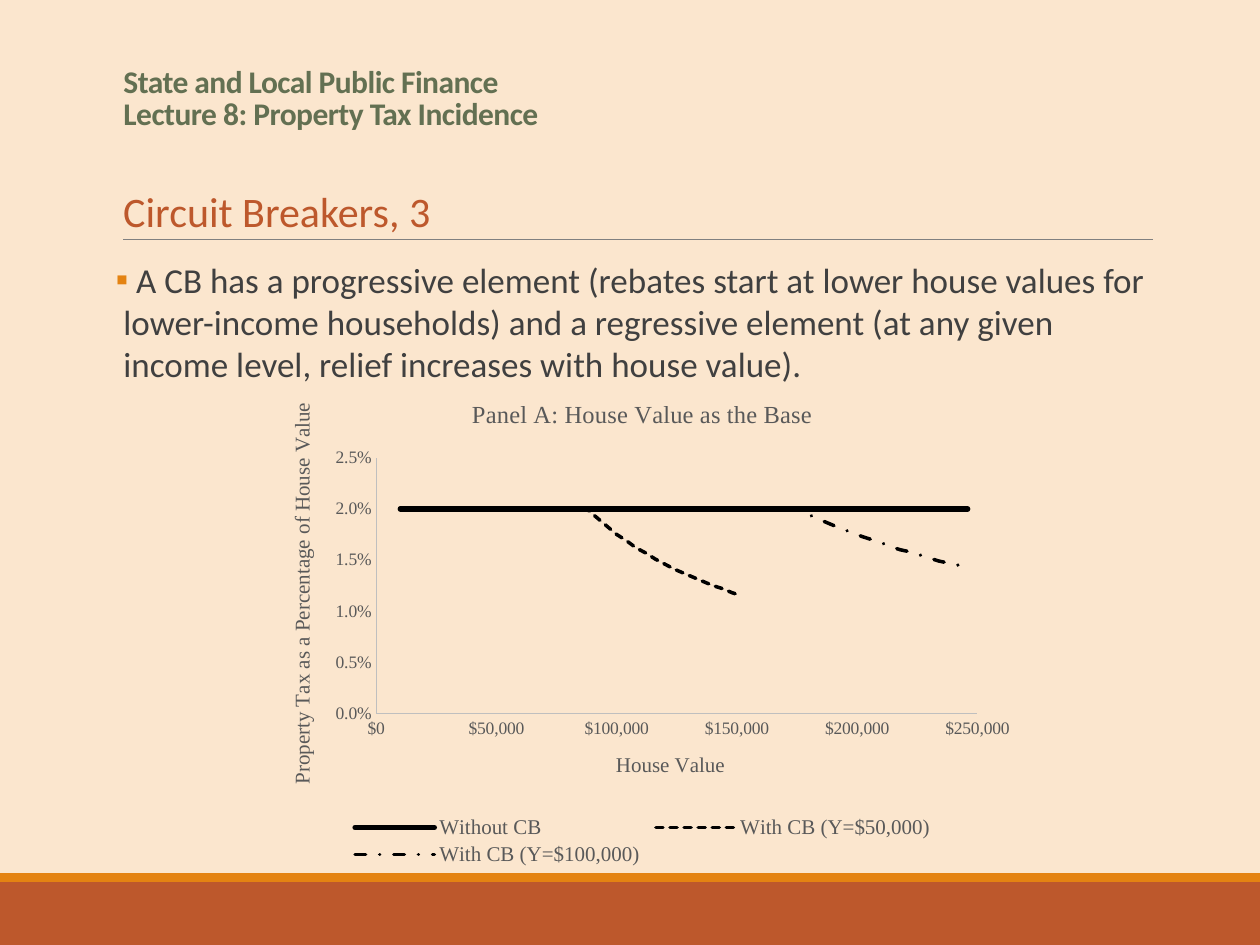
from lxml import etree
from pptx import Presentation
from pptx.chart.data import XyChartData
from pptx.dml.color import RGBColor
from pptx.enum.chart import XL_CHART_TYPE as ChartType, XL_LEGEND_POSITION as LegendPos
from pptx.enum.chart import XL_TICK_MARK as TickMark
from pptx.enum.dml import MSO_LINE as Dash
from pptx.enum.shapes import MSO_CONNECTOR as Connector, MSO_SHAPE as Shape
from pptx.enum.text import MSO_ANCHOR as Anchor, MSO_AUTO_SIZE as AutoSize, PP_ALIGN as Align
from pptx.oxml.ns import qn
from pptx.util import Inches, Pt

CREAM = RGBColor(0xFB, 0xE6, 0xCE)
RUST = RGBColor(0xBD, 0x58, 0x2C)
ORANGE = RGBColor(0xE4, 0x83, 0x12)
OLIVE = RGBColor(0x63, 0x70, 0x52)
CHARCOAL = RGBColor(0x40, 0x40, 0x40)
GRAY = RGBColor(0x59, 0x59, 0x59)
RULE_GRAY = RGBColor(0x80, 0x80, 0x80)
AXIS_GRAY = RGBColor(0xBF, 0xBF, 0xBF)
BLACK = RGBColor(0, 0, 0)

TAX_RATE = 0.02
LOW_VALUES = [10000, *range(80000, 152001, 4000)]
HIGH_VALUES = [*range(123000, 155001, 4000), *range(158000, 246001, 4000)]


def capped_rates(house_values, tax_cap):
    """Return the tax rate at each house value once the bill is capped."""
    return [round(min(TAX_RATE, tax_cap / value), 4) for value in house_values]


def place(element, after, x, y, w=None, h=None):
    """Give a chart part a manual layout, in fractions of the chart."""
    for old in element.findall(qn("c:layout")):
        element.remove(old)
    layout = etree.Element(qn("c:layout"))
    manual = etree.SubElement(layout, qn("c:manualLayout"))
    if after is None:
        etree.SubElement(manual, qn("c:layoutTarget"), val="inner")
        element.insert(0, layout)
    else:
        element.find(qn(after)).addnext(layout)
    for mode in ("xMode", "yMode"):
        etree.SubElement(manual, qn(f"c:{mode}"), val="edge")
    for name, value in zip("xywh", (x, y, w, h)):
        if value is not None:
            etree.SubElement(manual, qn(f"c:{name}"), val=str(value))


def drop_blank_points(chart):
    """Turn missing values into gaps in the chart's cached data."""
    for point in list(chart._chartSpace.iter(qn("c:pt"))):
        if point.findtext(qn("c:v")) in ("None", "", None):
            point.getparent().remove(point)


class LectureSlide:
    text_font = "Calibri"
    chart_font = "Times New Roman"

    def __init__(self, slide):
        self.slide = slide
        self.shapes = slide.shapes
        slide.background.fill.solid()
        slide.background.fill.fore_color.rgb = CREAM

    def style(self, font, size, color, bold=False, name=None):
        font.name = name or self.text_font
        font.size = Pt(size)
        font.bold = bold
        font.color.rgb = color

    def add_run(self, paragraph, text, size, color, bold=False, name=None):
        run = paragraph.add_run()
        run.text = text
        self.style(run.font, size, color, bold, name)
        return run

    def move(self, shape, left, top, width, height):
        shape.left, shape.top = Inches(left), Inches(top)
        shape.width, shape.height = Inches(width), Inches(height)

    def band(self, top, height, color):
        band = self.shapes.add_shape(
            Shape.RECTANGLE, 0, Inches(top), Inches(10), Inches(height))
        band.shadow.inherit = False
        band.fill.solid()
        band.fill.fore_color.rgb = color
        band.line.fill.background()

    def rule(self, left, right, y):
        rule = self.shapes.add_connector(
            Connector.STRAIGHT, Inches(left), Inches(y), Inches(right), Inches(y))
        rule.line.color.rgb = RULE_GRAY
        rule.line.width = Pt(0.5)
        etree.SubElement(rule._element.spPr, qn("a:effectLst"))

    def title(self, lines):
        title = self.shapes.title
        self.move(title, 0.88, 0.33, 8.25, 0.77)
        frame = title.text_frame
        frame.vertical_anchor = Anchor.BOTTOM
        frame.auto_size = AutoSize.NONE
        paragraph = frame.paragraphs[0]
        paragraph.alignment = Align.LEFT
        paragraph.line_spacing = 0.85
        for index, line in enumerate(lines):
            if index:
                paragraph.add_line_break()
            run = self.add_run(paragraph, line, 18, OLIVE, bold=True)
            run.font._element.set("spc", "-30")

    def heading(self, text):
        box = self.shapes.add_textbox(Inches(0.88), Inches(1.42), Inches(2.66), Inches(0.5))
        frame = box.text_frame
        frame.word_wrap = False
        frame.auto_size = AutoSize.SHAPE_TO_FIT_TEXT
        self.add_run(frame.paragraphs[0], text, 24, RUST)

    def body(self, text):
        body = self.slide.placeholders[1]
        self.move(body, 0.92, 2, 8.18, 4.92)
        frame = body.text_frame
        frame.auto_size = AutoSize.NONE
        frame.margin_left = frame.margin_right = 0
        paragraph = frame.paragraphs[0]
        paragraph.space_before, paragraph.space_after = Pt(6.8), Pt(1.1)
        self.add_run(paragraph, " ", 20, CHARCOAL, bold=True)
        self.add_run(paragraph, text, 20, CHARCOAL)
        props = paragraph._p.get_or_add_pPr()
        props.set("marL", str(Inches(0.06)))
        props.set("indent", str(-Inches(0.06)))
        bullet_color = etree.SubElement(props, qn("a:buClr"))
        etree.SubElement(bullet_color, qn("a:srgbClr"), val=str(ORANGE))
        etree.SubElement(props, qn("a:buFont"), typeface=self.text_font)
        etree.SubElement(props, qn("a:buChar"), char="▪")

    def chart_title(self, title, text, size, x, y):
        self.add_run(title.text_frame.paragraphs[0], text, size, GRAY, name=self.chart_font)
        place(title._element, "c:tx", x, y)

    def axis(self, axis, top, step, number_format):
        axis.minimum_scale, axis.maximum_scale, axis.major_unit = 0, top, step
        axis.has_major_gridlines = False
        axis.major_tick_mark = axis.minor_tick_mark = TickMark.NONE
        axis.tick_labels.number_format = number_format
        axis.tick_labels.number_format_is_linked = False
        self.style(axis.tick_labels.font, 10, GRAY, name=self.chart_font)
        axis.format.line.color.rgb = AXIS_GRAY
        axis.format.line.width = Pt(0.75)

    def rate_chart(self, house_values, lines):
        """Draw (name, rates, width, dash) lines over the house values."""
        data = XyChartData()
        for name, rates, _, _ in lines:
            series = data.add_series(name)
            for value, rate in zip(house_values, rates):
                series.add_data_point(value, rate)
        chart = self.shapes.add_chart(
            ChartType.XY_SCATTER_LINES_NO_MARKERS, Inches(2.08), Inches(3.01),
            Inches(6.04), Inches(3.9), data).chart
        drop_blank_points(chart)
        self.style(chart.font, 10, BLACK)
        chart.plots[0].vary_by_categories = False
        for series, (_, _, width, dash) in zip(chart.plots[0].series, lines):
            series.smooth = True
            line = series.format.line
            line.color.rgb = BLACK
            line.width = Pt(width)
            if dash:
                line.dash_style = dash
            series._element.spPr.find(qn("a:ln")).set("cap", "rnd")

        chart.has_title = True
        self.chart_title(chart.chart_title, "Panel A: House Value as the Base", 14, 0.27, 0.03)
        houses, rates = chart.category_axis, chart.value_axis
        self.axis(houses, 250000, 50000, '"$"#,##0')
        self.axis(rates, 0.025, 0.005, "0.0%")
        self.chart_title(houses.axis_title, "House Value", 12, 0.46, 0.75)
        self.chart_title(rates.axis_title, "Property Tax as a Percentage of House Value",
                         12, 0.03, 0.04)
        rotation = rates.axis_title.text_frame._txBody.find(qn("a:bodyPr"))
        rotation.set("rot", "-5400000")
        rotation.set("vert", "horz")

        chart.has_legend = True
        chart.legend.position = LegendPos.BOTTOM
        chart.legend.include_in_layout = False
        self.style(chart.legend.font, 12, GRAY, name=self.chart_font)
        place(chart.legend._element, "c:legendPos", 0.11, 0.88, 0.78, 0.12)
        place(chart._chartSpace.chart.plotArea, None, 0.15, 0.16, 0.79, 0.52)


def main():
    deck = Presentation()
    deck.slide_width, deck.slide_height = Inches(10), Inches(7.5)
    lecture = LectureSlide(deck.slides.add_slide(deck.slide_layouts[1]))
    lecture.band(7, 0.5, RUST)
    lecture.band(6.93, 0.07, ORANGE)
    lecture.rule(0.98, 9.15, 1.9)
    lecture.title(["State and Local Public Finance", "Lecture 8: Property Tax Incidence"])
    lecture.heading("Circuit Breakers, 3")
    lecture.body("A CB has a progressive element (rebates start at lower house values for "
                 "lower-income households) and a regressive element (at any given income "
                 "level, relief increases with house value).")
    house_values = LOW_VALUES + HIGH_VALUES
    low_rates = [None] + capped_rates(LOW_VALUES[1:], 1753) + [None] * len(HIGH_VALUES)
    high_rates = [None] * len(LOW_VALUES) + capped_rates(HIGH_VALUES, 3498)
    lecture.rate_chart(house_values, [
        ("Without CB", [TAX_RATE] * len(house_values), 3, None),
        ("With CB (Y=$50,000)", low_rates, 2, Dash.SQUARE_DOT),
        ("With CB (Y=$100,000)", high_rates, 2, Dash.DASH_DOT),
    ])
    deck.save("out.pptx")


if __name__ == "__main__":
    main()
